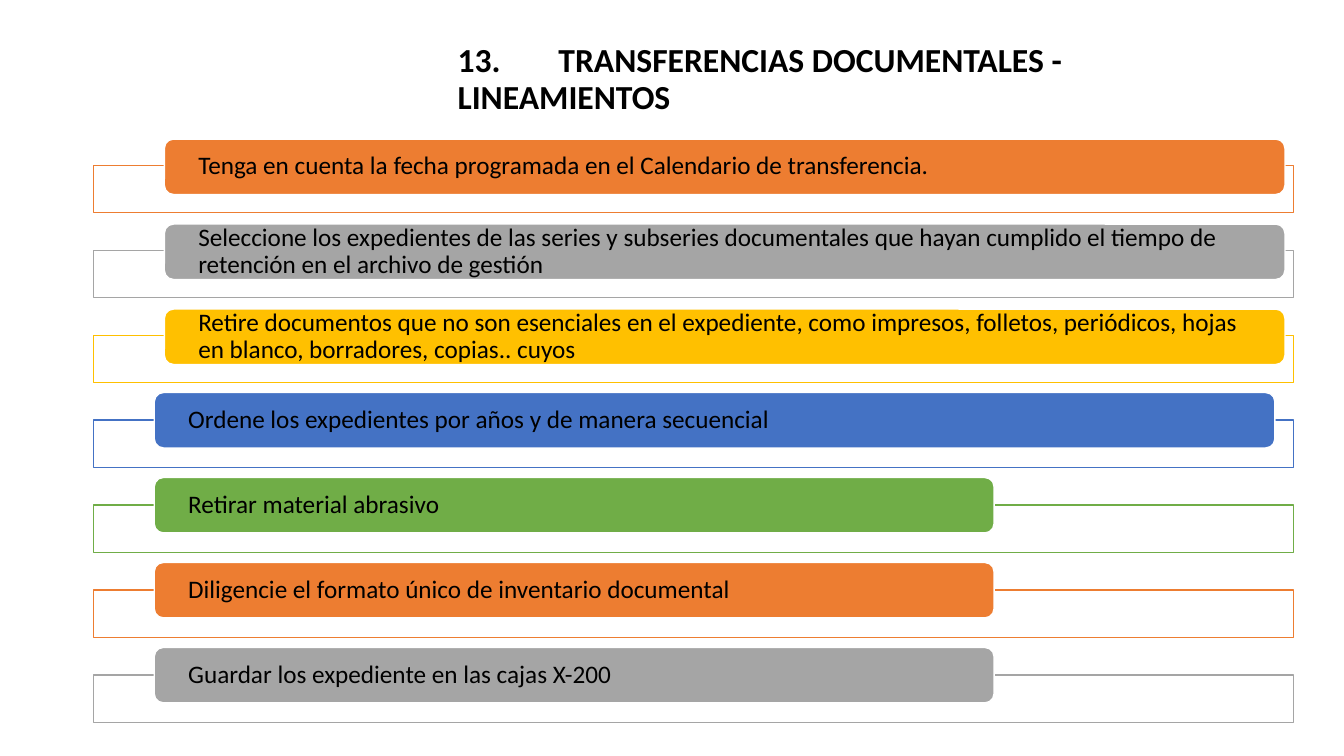
from lxml import etree
from pptx import Presentation
from pptx import util as u
from pptx.dml.color import RGBColor
from pptx.enum import shapes, text
from pptx.oxml.ns import qn

BLACK = RGBColor(0x00, 0x00, 0x00)
WHITE = RGBColor(0xFF, 0xFF, 0xFF)
ORANGE = RGBColor(0xED, 0x7D, 0x31)
GRAY = RGBColor(0xA5, 0xA5, 0xA5)
GOLD = RGBColor(0xFF, 0xC0, 0x00)
BLUE = RGBColor(0x44, 0x72, 0xC4)
GREEN = RGBColor(0x70, 0xAD, 0x47)

ROW_PITCH = 0.843
FRAME_HEIGHT = 0.47
LABEL_HEIGHT = 0.55
FULL, SHORT = 0.934, 0.7
FAR, NEAR = (0.7, 0.26), (0.6, 0.275)

GUIDELINES = [
    ("Tenga en cuenta la fecha programada en el Calendario de transferencia.", ORANGE, FAR, FULL),
    ("Seleccione los expedientes de las series y subseries documentales que hayan "
     "cumplido el tiempo de retención en el archivo de gestión", GRAY, FAR, FULL),
    ("Retire documentos que no son esenciales en el expediente, como impresos, folletos, "
     "periódicos, hojas en blanco, borradores, copias.. cuyos", GOLD, FAR, FULL),
    ("Ordene los expedientes por años y de manera secuencial", BLUE, NEAR, FULL),
    ("Retirar material abrasivo", GREEN, NEAR, SHORT),
    ("Diligencie el formato único de inventario documental", ORANGE, NEAR, SHORT),
    ("Guardar los expediente en las cajas X-200", GRAY, NEAR, SHORT),
]


def write(frame, wording, size, bold=False):
    frame.word_wrap = True
    frame.vertical_anchor = text.MSO_ANCHOR.MIDDLE
    paragraph = frame.paragraphs[0]
    paragraph.text = wording
    paragraph.alignment = text.PP_ALIGN.LEFT
    paragraph.line_spacing = 0.9
    for run in paragraph.runs:
        run.font.name = "Calibri"
        run.font.size = u.Pt(size)
        run.font.bold = bold
        run.font.color.rgb = BLACK
    return paragraph


def add_block(slide, kind, box, fill, line):
    block = slide.shapes.add_shape(kind, *map(u.Inches, box))
    block.shadow.inherit = False
    block.fill.solid()
    block.fill.fore_color.rgb = fill
    block.line.color.rgb = line
    block.line.width = u.Pt(1)
    return block


def add_title(slide, box):
    title = slide.shapes.add_textbox(*map(u.Inches, box))
    heading = write(title.text_frame, "13.\tTRANSFERENCIAS DOCUMENTALES - LINEAMIENTOS", 24, True)
    tabs = etree.SubElement(heading._p.get_or_add_pPr(), qn("a:tabLst"))
    etree.SubElement(tabs, qn("a:tab"), pos=str(u.Inches(1)), algn="l")


def add_guideline(slide, box, wording, color, offset, share):
    left, top, width, height = box
    indent, rise = offset
    frame = add_block(slide, shapes.MSO_SHAPE.RECTANGLE, box, WHITE, color)
    white = frame.fill._xPr.find(qn("a:solidFill"))[0]
    etree.SubElement(white, qn("a:alpha"), val="90000")
    label_box = (left + indent, top - rise, width * share, LABEL_HEIGHT)
    label = add_block(slide, shapes.MSO_SHAPE.ROUNDED_RECTANGLE, label_box, color, WHITE)
    words = label.text_frame
    words.margin_left = words.margin_right = u.Inches(0.31)
    words.margin_top = words.margin_bottom = 0
    write(words, wording, 18)


def add_guidelines(slide, left, top, width):
    for row, guideline in enumerate(GUIDELINES):
        box = (left, top + row * ROW_PITCH, width, FRAME_HEIGHT)
        add_guideline(slide, box, *guideline)


def main():
    deck = Presentation()
    deck.slide_width, deck.slide_height = u.Inches(13.33), u.Inches(7.5)
    slide = deck.slides.add_slide(deck.slide_layouts[6])
    add_guidelines(slide, 0.93, 1.64, 11.9)
    add_title(slide, (4.44, 0.29, 8.16, 1.01))
    deck.save("out.pptx")


if __name__ == "__main__":
    main()
